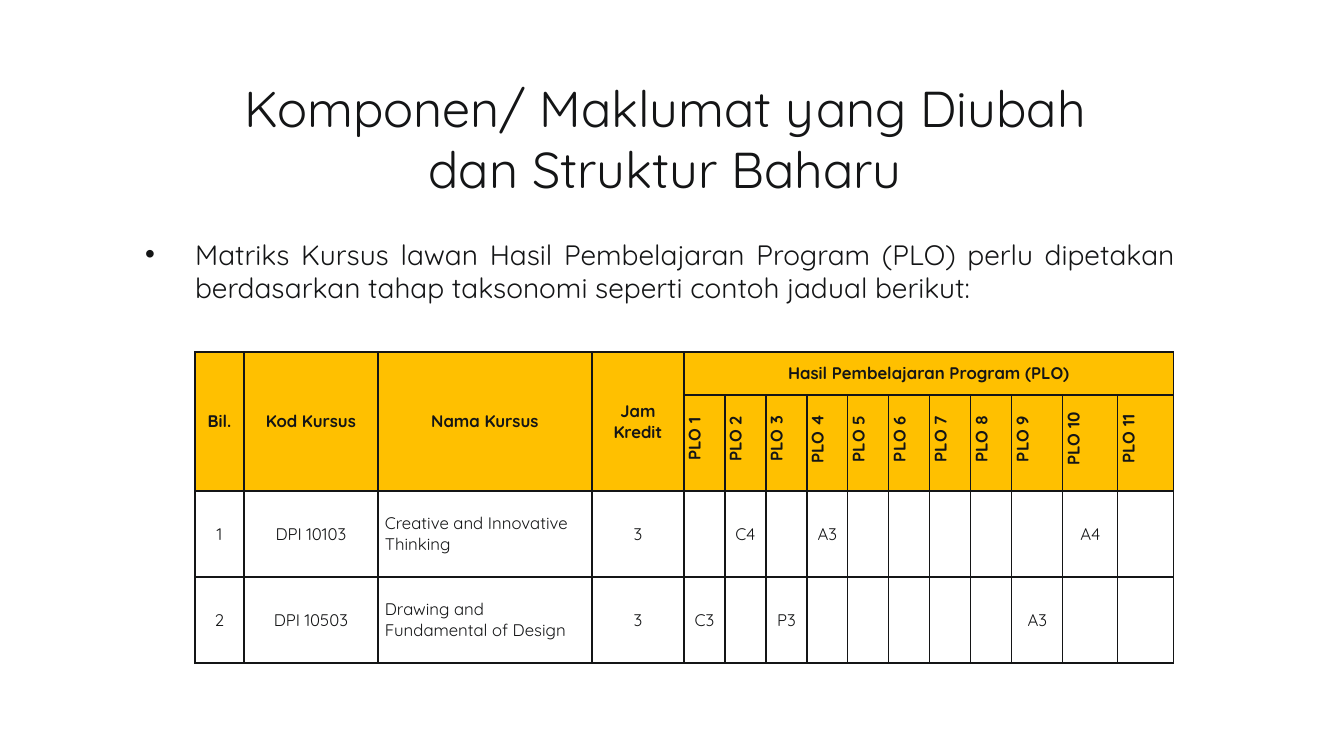
from copy import deepcopy
from dataclasses import dataclass

from lxml.etree import SubElement
from pptx import Presentation
from pptx.dml.color import RGBColor
from pptx.enum.text import MSO_ANCHOR as Anchor, MSO_AUTO_SIZE as AutoSize, PP_ALIGN as Align
from pptx.oxml.ns import qn
from pptx.util import Emu, Pt


@dataclass
class Theme:
    font: str = "Quicksand"
    ink: str = "141516"
    header: str = "FFC000"
    title_size: int = 36
    body_size: int = 20
    table_size: int = 12
    border: int = 1


theme = Theme()
PX = 914400 / 100.8


def px(length):
    return Emu(round(length * PX))


def write(frame, text, size, bold=False, align=Align.CENTER, left=0, hanging=0):
    para = frame.paragraphs[0]
    para.text = text
    para.alignment = align
    para.space_before = Pt(0)
    properties = para._p.get_or_add_pPr()
    properties.set("marL", str(px(left)))
    properties.set("indent", str(px(-hanging)))
    for span in para.runs:
        span.font.name = theme.font
        span.font.size = Pt(size)
        span.font.bold = bold
        span.font.color.rgb = RGBColor.from_string(theme.ink)
    for line_break in para._p.findall(qn("a:br")):
        line_break.insert(0, deepcopy(para.runs[0]._r.rPr))


deck = Presentation()
deck.slide_width, deck.slide_height = px(1344), px(756)
page = deck.slides.add_slide(deck.slide_layouts[1])

# Title and bullet
title, body = page.placeholders
title.left, title.top, title.width, title.height = map(px, (67, 75, 1210, 126))
title.text_frame.vertical_anchor = Anchor.MIDDLE
write(title.text_frame, "Komponen/ Maklumat yang Diubah \vdan Struktur Baharu ", theme.title_size)

body.left, body.top, body.width, body.height = map(px, (135, 232, 1050, 444))
body.text_frame.auto_size = AutoSize.NONE
write(body.text_frame,
      "Matriks Kursus lawan Hasil Pembelajaran Program (PLO) perlu dipetakan "
      "berdasarkan tahap taksonomi seperti contoh jadual berikut:",
      theme.body_size, align=Align.JUSTIFY, left=50, hanging=50)

# Course matrix: four course columns, then one column per PLO
PLO_COUNT = 11
NAME_COLUMN, FIRST_PLO = 2, 4
headings = ["Bil.", "Kod Kursus", "Nama Kursus", "Jam Kredit"]
courses = [
    (["1", "DPI 10103", "Creative and Innovative Thinking", "3"], {2: "C4", 4: "A3", 10: "A4"}),
    (["2", "DPI 10503", "Drawing and Fundamental of Design", "3"], {1: "C3", 3: "P3", 9: "A3"}),
]
plos = range(1, PLO_COUNT + 1)
rows = [
    headings + ["Hasil Pembelajaran Program (PLO)"] + [""] * (PLO_COUNT - 1),
    [""] * FIRST_PLO + [f"PLO {plo}" for plo in plos],
]
rows += [details + [levels.get(plo, "") for plo in plos] for details, levels in courses]

widths = [49, 134, 214, 92] + [41] * 8 + [51, 55, 56]
heights = [43, 96, 86, 86]
table = page.shapes.add_table(len(heights), len(widths), px(195), px(352),
                              px(sum(widths)), px(sum(heights))).table
table.first_row = table.horz_banding = False
for column, width in zip(table.columns, widths):
    column.width = px(width)
for row, height in zip(table.rows, heights):
    row.height = px(height)

# Merged headings
for column in range(FIRST_PLO):
    table.cell(0, column).merge(table.cell(1, column))
table.cell(0, FIRST_PLO).merge(table.cell(0, len(widths) - 1))

# Cell text, borders and fills
for row, texts in enumerate(rows):
    for column, text in enumerate(texts):
        cell = table.cell(row, column)
        is_header = row < 2
        is_plo_name = row == 1 and column >= FIRST_PLO
        cell.vertical_anchor = Anchor.MIDDLE
        cell.margin_left = cell.margin_right = px(7)
        cell.margin_top = cell.margin_bottom = 0
        cell_properties = cell._tc.get_or_add_tcPr()
        if is_plo_name:
            cell_properties.set("vert", "vert270")
        for side in ("lnL", "lnR", "lnT", "lnB"):
            line = SubElement(cell_properties, qn(f"a:{side}"), w=str(Pt(theme.border)))
            SubElement(SubElement(line, qn("a:solidFill")), qn("a:srgbClr"), val=theme.ink)
        if is_header:
            cell.fill.solid()
            cell.fill.fore_color.rgb = RGBColor.from_string(theme.header)
        else:
            cell.fill.background()
        if text:
            is_course_name = not is_header and column == NAME_COLUMN
            write(cell.text_frame, text, theme.table_size, bold=is_header,
                  align=Align.LEFT if is_course_name else Align.CENTER,
                  left=8 if is_plo_name else 0)

deck.save("out.pptx")
